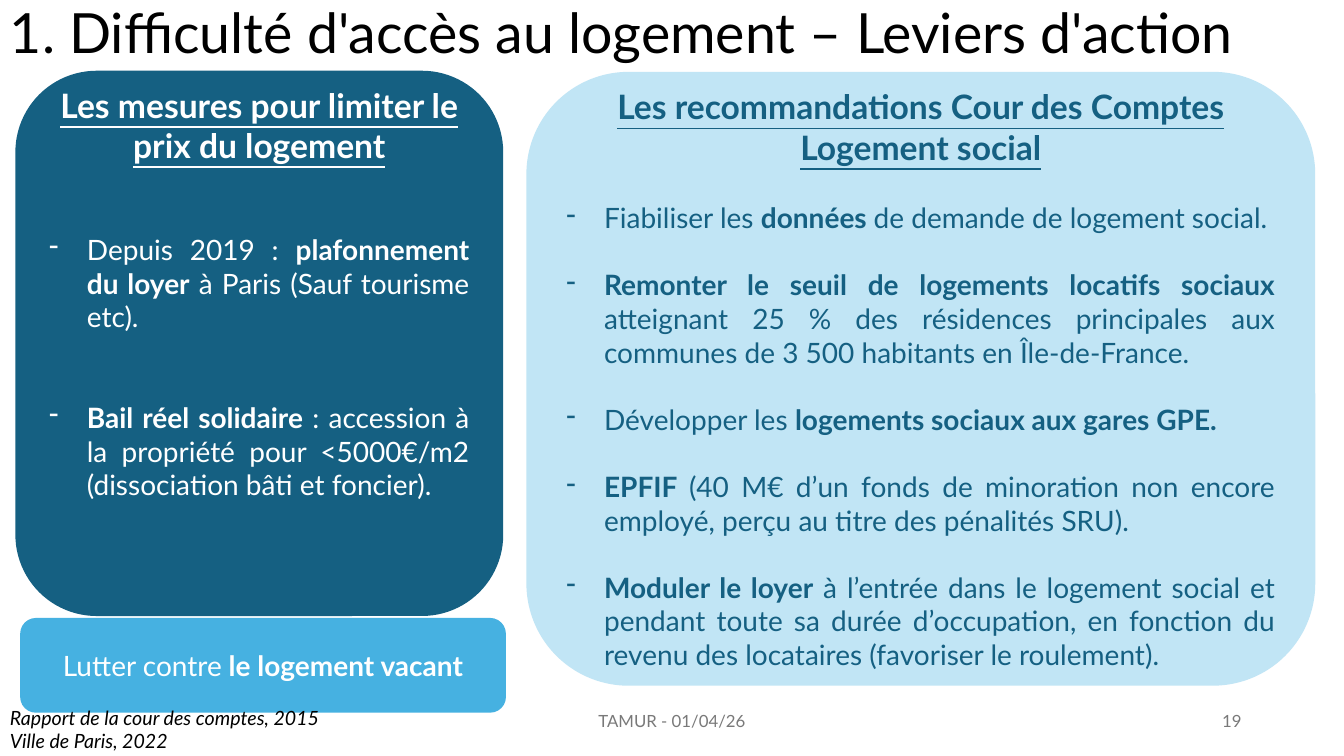
from lxml import etree
from pptx import Presentation
from pptx.dml.color import RGBColor
from pptx.enum.shapes import MSO_SHAPE as SHAPE
from pptx.enum.text import MSO_ANCHOR as ANCHOR, PP_ALIGN as ALIGN
from pptx.oxml.ns import qn
from pptx.util import Pt

FONT = "Lato"
BLACK, WHITE, GREY = "000000", "FFFFFF", "797979"
NAVY, SKY, PALE = "156082", "46B1E1", "C1E5F5"

MEASURES = [
    "Depuis 2019 : *plafonnement du loyer* à Paris (Sauf tourisme etc).",
    "*Bail réel solidaire* : accession à la propriété pour <5000€/m2 "
    "(dissociation bâti et foncier).",
]
ADVICE = [
    "Fiabiliser les *données *de demande de logement social.",
    "*Remonter le seuil de logements locatifs sociaux* atteignant 25 % des "
    "résidences principales aux communes de 3 500 habitants en Île-de-France.",
    "Développer les *logements sociaux aux gares GPE.*",
    "*EPFIF *(40 M€ d’un fonds de minoration non encore employé, perçu au "
    "titre des pénalités SRU).",
    "*Moduler le loyer* à l’entrée dans le logement social et pendant toute "
    "sa durée d’occupation, en fonction du revenu des locataires (favoriser "
    "le roulement).",
]


def rgb(color):
    """Turn a hex string into a colour."""
    return RGBColor.from_string(color)


def style(r, size, color, bold=False, underline=False, italic=False):
    """Format one run."""
    f = r.font
    f.name, f.size, f.color.rgb = FONT, Pt(size), rgb(color)
    f.bold, f.underline, f.italic = bold, underline, italic


def write_marked(p, text, size, color):
    """Fill a paragraph, setting the parts between asterisks in bold."""
    for i, part in enumerate(text.split("*")):
        if part:
            r = p.add_run()
            r.text = part
            style(r, size, color, bold=i % 2 == 1)


def add_dash(p, indent):
    """Give a paragraph a hanging dash."""
    pPr = p._p.get_or_add_pPr()
    pPr.set("marL", str(Pt(indent)))
    pPr.set("indent", str(-Pt(indent)))
    etree.SubElement(pPr, qn("a:buChar")).set("char", "-")


def add_label(slide, box, text, size, color, align=ALIGN.LEFT,
              anchor=ANCHOR.MIDDLE, italic=False, spacing=None):
    """Place plain text in a box."""
    tf = slide.shapes.add_textbox(*map(Pt, box)).text_frame
    tf.word_wrap = True
    tf.vertical_anchor = anchor
    tf.text = text
    for p in tf.paragraphs:
        p.alignment, p.line_spacing = align, spacing
        for r in p.runs:
            style(r, size, color, italic=italic)


def add_panel(slide, box, fill):
    """Draw a rounded panel and return its text frame."""
    s = slide.shapes.add_shape(SHAPE.ROUNDED_RECTANGLE, *map(Pt, box))
    s.shadow.inherit = False
    s.fill.solid()
    s.fill.fore_color.rgb = rgb(fill)
    s.line.fill.background()
    tf = s.text_frame
    tf.word_wrap = True
    tf.vertical_anchor = ANCHOR.MIDDLE
    return tf


def add_card(slide, box, fill, color, heading, items, first_gap, gap, bottom=3.6):
    """Draw a panel with an underlined heading and a dashed list."""
    tf = add_panel(slide, box, fill)
    tf.margin_bottom = Pt(bottom)
    tf.text = heading
    for p in tf.paragraphs:
        p.alignment = ALIGN.CENTER
        style(p.runs[0], 24, color, bold=True, underline=True)
    for i, item in enumerate(items):
        p = tf.add_paragraph()
        p.alignment = ALIGN.JUSTIFY
        p.space_before = Pt(gap if i else first_gap)
        add_dash(p, 27)
        write_marked(p, item, 20, color)


def add_banner(slide, box, fill, color, text):
    """Draw a panel with one centred line."""
    p = add_panel(slide, box, fill).paragraphs[0]
    p.alignment = ALIGN.CENTER
    write_marked(p, text, 20, color)


def add_footer(slide, left, top, height):
    """Place the sources, the event and the page number."""
    add_label(slide, (left + 318, top, 324, height), "TAMUR - 01/04/26",
              12, GREY, ALIGN.CENTER)
    add_label(slide, (left + 678, top, 216, height), "19", 12, GREY, ALIGN.RIGHT)
    add_label(slide, (left, top, 412, 41),
              "Rapport de la cour des comptes, 2015\nVille de Paris, 2022",
              14, BLACK, anchor=ANCHOR.TOP, italic=True)


def build_slide(prs):
    """Build the slide on housing levers."""
    slide = prs.slides.add_slide(prs.slide_layouts[6])
    add_label(slide, (0, 0.7, 959, 49),
              "1. Difficulté d'accès au logement – Leviers d'action",
              39.6, BLACK, spacing=0.9)
    add_card(slide, (376, 51.3, 563.5, 438.5), PALE, NAVY,
             "Les recommandations Cour des Comptes\nLogement social",
             ADVICE, 24, 24)
    add_card(slide, (11, 50.5, 348.5, 389.5), NAVY, WHITE,
             "Les mesures pour limiter le prix du logement",
             MEASURES, 48, 48, bottom=75.6)
    add_banner(slide, (14.4, 441.4, 347, 67.7), SKY, WHITE,
               "Lutter contre* le logement vacant*")
    add_footer(slide, 0, 500.5, 28.8)


def main():
    """Create and save the presentation."""
    prs = Presentation()
    prs.slide_width, prs.slide_height = Pt(960), Pt(540)
    build_slide(prs)
    prs.save("out.pptx")


if __name__ == "__main__":
    main()
